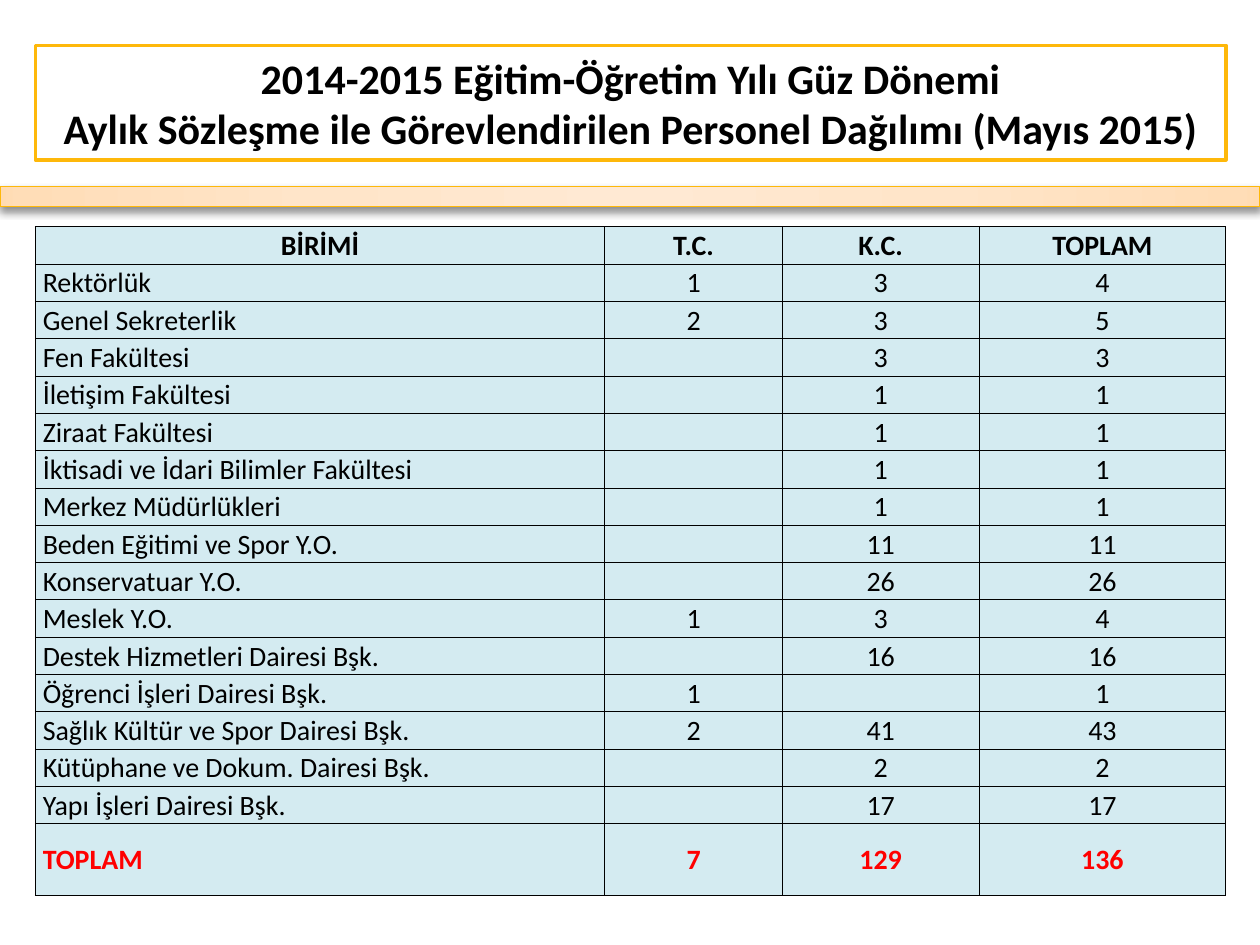
from lxml import etree
from pptx import Presentation
from pptx.dml.color import RGBColor
from pptx.enum.shapes import MSO_SHAPE
from pptx.enum.text import MSO_ANCHOR, PP_ALIGN
from pptx.oxml import parse_xml
from pptx.oxml.ns import nsdecls, qn
from pptx.util import Inches, Pt

RECTANGLE = MSO_SHAPE.RECTANGLE
MIDDLE = MSO_ANCHOR.MIDDLE
LEFT, CENTER = PP_ALIGN.LEFT, PP_ALIGN.CENTER

WHITE = RGBColor(0xFF, 0xFF, 0xFF)
BLACK = RGBColor(0x00, 0x00, 0x00)
RED = RGBColor(0xFF, 0x00, 0x00)
GOLD = RGBColor(0xFE, 0xB8, 0x0A)
PALE_BLUE = RGBColor(0xD4, 0xEB, 0xF1)
BAND_STOPS = [
    (0, RGBColor(0xFF, 0xE9, 0xD3)),
    (50, RGBColor(0xFF, 0xE5, 0xC9)),
    (97, RGBColor(0xFF, 0xDD, 0xB7)),
    (100, RGBColor(0xFF, 0xDB, 0xB2)),
]

FONT = "Calibri"
TITLE = (
    "2014-2015 Eğitim-Öğretim Yılı Güz Dönemi\v"
    "Aylık Sözleşme ile Görevlendirilen Personel Dağılımı (Mayıs 2015)"
)
COLUMN_WIDTHS = [4.52, 1.41, 1.56, 1.96]
TOTAL_ROW_HEIGHT = Inches(0.57)
STAFF = [
    ("BİRİMİ", "T.C.", "K.C.", "TOPLAM"),
    ("Rektörlük", "1", "3", "4"),
    ("Genel Sekreterlik", "2", "3", "5"),
    ("Fen Fakültesi", "", "3", "3"),
    ("İletişim Fakültesi", "", "1", "1"),
    ("Ziraat Fakültesi", "", "1", "1"),
    ("İktisadi ve İdari Bilimler Fakültesi", "", "1", "1"),
    ("Merkez Müdürlükleri", "", "1", "1"),
    ("Beden Eğitimi ve Spor Y.O.", "", "11", "11"),
    ("Konservatuar Y.O.", "", "26", "26"),
    ("Meslek Y.O.", "1", "3", "4"),
    ("Destek Hizmetleri Dairesi Bşk.", "", "16", "16"),
    ("Öğrenci İşleri Dairesi Bşk.", "1", "", "1"),
    ("Sağlık Kültür ve Spor Dairesi Bşk.", "2", "41", "43"),
    ("Kütüphane ve Dokum. Dairesi Bşk.", "", "2", "2"),
    ("Yapı İşleri Dairesi Bşk.", "", "17", "17"),
    ("TOPLAM", "7", "129", "136"),
]


def style_paragraph(para, size, color, bold, alignment):
    para.alignment = alignment
    para.font.name = FONT
    para.font.size = Pt(size)
    para.font.bold = bold
    para.font.color.rgb = color


def add_outlined_box(page, box, line_width):
    shape = page.shapes.add_shape(RECTANGLE, *box)
    shape.shadow.inherit = False
    shape.line.color.rgb = GOLD
    shape.line.width = Pt(line_width)
    return shape


def add_title(page, box):
    shape = add_outlined_box(page, box, 2)
    shape.fill.solid()
    shape.fill.fore_color.rgb = WHITE
    frame = shape.text_frame
    frame.word_wrap = True
    frame.vertical_anchor = MIDDLE
    para = frame.paragraphs[0]
    para.text = TITLE
    style_paragraph(para, 24, BLACK, True, CENTER)


def add_band(page, box):
    shape = add_outlined_box(page, box, 0.75)
    properties = shape.element.spPr
    stops = "".join(
        f'<a:gs pos="{position * 1000}"><a:srgbClr val="{color}"/></a:gs>'
        for position, color in BAND_STOPS
    )
    gradient = parse_xml(
        f'<a:gradFill {nsdecls("a")} rotWithShape="1"><a:gsLst>{stops}</a:gsLst>'
        '<a:path path="circle"><a:fillToRect l="50000" t="50000" r="50000" b="50000"/>'
        "</a:path></a:gradFill>"
    )
    properties.find(qn("a:ln")).addprevious(gradient)
    shadow = parse_xml(
        f'<a:outerShdw {nsdecls("a")} blurRad="{Pt(5)}" dist="{Pt(2)}" dir="5400000" '
        'rotWithShape="0"><a:srgbClr val="000000"><a:alpha val="43000"/></a:srgbClr>'
        "</a:outerShdw>"
    )
    properties.find(qn("a:effectLst")).append(shadow)


def add_cell_borders(cell):
    properties = cell._tc.get_or_add_tcPr()
    for index, side in enumerate(("lnL", "lnR", "lnT", "lnB")):
        border = parse_xml(
            f'<a:{side} {nsdecls("a")} w="{Pt(0.5)}"><a:solidFill>'
            f'<a:srgbClr val="{BLACK}"/></a:solidFill></a:{side}>'
        )
        properties.insert(index, border)


def fill_cell(cell, text, bold, color, alignment):
    cell.fill.solid()
    cell.fill.fore_color.rgb = PALE_BLUE
    add_cell_borders(cell)
    cell.vertical_anchor = MIDDLE
    cell.margin_left = Inches(0.06 if alignment == LEFT else 0.01)
    cell.margin_right = cell.margin_top = Inches(0.01)
    cell.margin_bottom = 0
    para = cell.text_frame.paragraphs[0]
    style_paragraph(para, 16, color, bold, alignment)
    if text:
        para.add_run().text = text
    else:
        etree.SubElement(para._p, qn("a:endParaRPr"), sz="1600")


def add_staff_table(page, box):
    height = box[3]
    last = len(STAFF) - 1
    table = page.shapes.add_table(len(STAFF), len(COLUMN_WIDTHS), *box).table
    for column, width in zip(table.columns, COLUMN_WIDTHS):
        column.width = Inches(width)
    for row_index, values in enumerate(STAFF):
        is_header, is_total = row_index == 0, row_index == last
        row = table.rows[row_index]
        row.height = TOTAL_ROW_HEIGHT if is_total else (height - TOTAL_ROW_HEIGHT) // last
        for column_index, text in enumerate(values):
            alignment = LEFT if column_index == 0 and not is_header else CENTER
            color = RED if is_total else BLACK
            cell = table.cell(row_index, column_index)
            fill_cell(cell, text, is_header or is_total, color, alignment)


def main():
    deck = Presentation()
    deck.slide_width = Inches(10)
    deck.slide_height = Inches(7.5)
    page = deck.slides.add_slide(deck.slide_layouts[6])
    margin, width = Inches(0.28), Inches(9.45)
    add_title(page, (margin, Inches(0.36), width, Inches(0.91)))
    add_band(page, (0, Inches(1.48), deck.slide_width, Inches(0.16)))
    add_staff_table(page, (margin, Inches(1.8), width, Inches(5.31)))
    deck.save("out.pptx")


if __name__ == "__main__":
    main()
